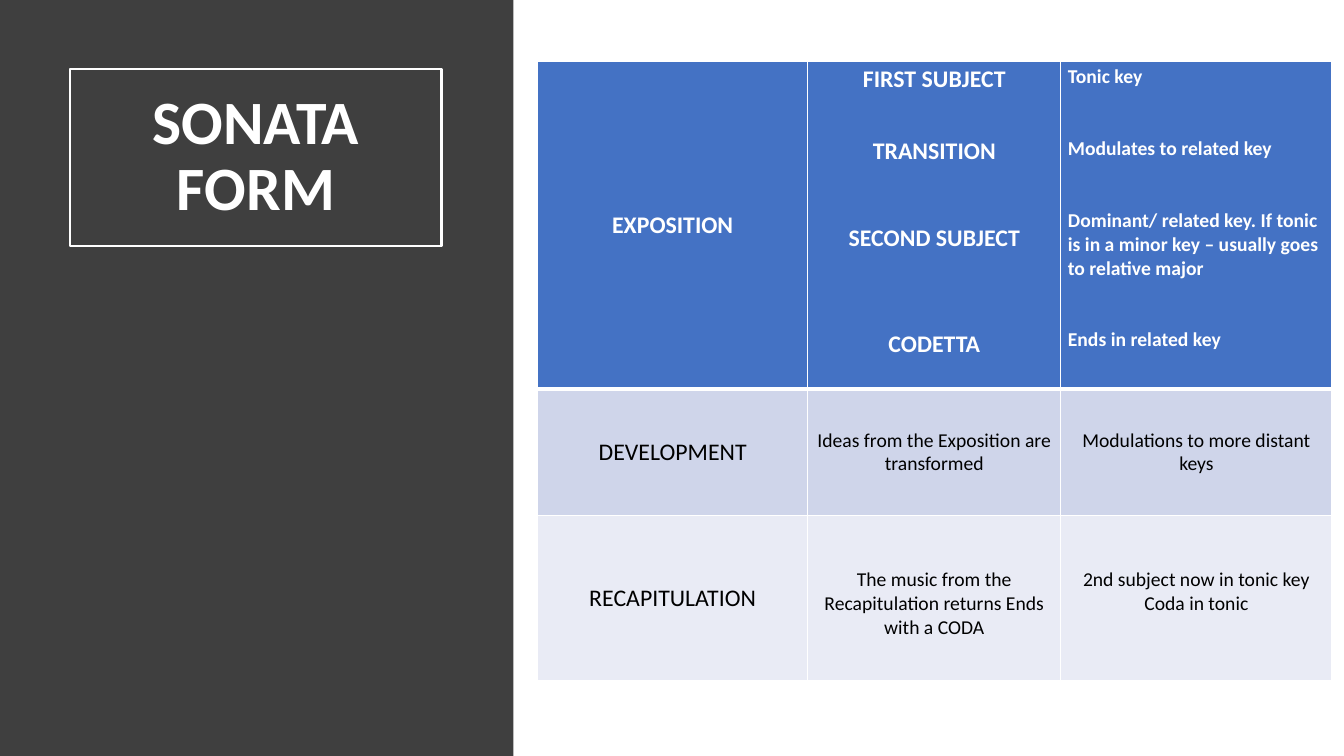
from dataclasses import dataclass

from lxml.etree import SubElement
from pptx import Presentation
from pptx.dml.color import RGBColor
from pptx.enum.shapes import MSO_SHAPE
from pptx.enum.text import MSO_ANCHOR, PP_ALIGN
from pptx.oxml.ns import qn
from pptx.util import Inches, Pt


@dataclass(frozen=True)
class Theme:
    font: str = "Calibri"
    white: str = "FFFFFF"
    black: str = "000000"
    panel: str = "3F3F3F"
    bands: tuple = ("4472C4", "CFD5EA", "E9EBF5")
    title: float = 44
    label: float = 17
    body: float = 14
    thin: float = 1
    frame: float = 1.5
    thick: float = 3


@dataclass(frozen=True)
class Cell:
    """Lines of text, with the gap in points above each line after the first."""
    lines: tuple
    size: float
    gaps: tuple = ()
    align: PP_ALIGN = PP_ALIGN.CENTER
    anchor: MSO_ANCHOR = MSO_ANCHOR.MIDDLE
    top: float = 0.04


THEME = Theme()
WIDE, HIGH = 13.33, 7.5
COLS = (2.68, 2.51, 2.69)
ROWS = (3.25, 1.26, 1.63)
TOP = MSO_ANCHOR.TOP
DROP = 0.52

GRID = (
    (
        Cell(("EXPOSITION",), THEME.label),
        Cell(("FIRST SUBJECT", "TRANSITION", "SECOND SUBJECT", "CODETTA"),
             THEME.label, (30.5, 41.5, 54.3), anchor=TOP),
        Cell(("Tonic key", "Modulates to related key",
              "Dominant/ related key. If tonic is in a minor key – usually goes "
              "to relative major", "Ends in related key"),
             THEME.body, (34.2,) * 3, PP_ALIGN.LEFT, TOP),
    ),
    (
        Cell(("DEVELOPMENT",), THEME.label),
        Cell(("Ideas from the Exposition are transformed",), THEME.body),
        Cell(("Modulations to more distant keys",), THEME.body),
    ),
    (
        Cell(("RECAPITULATION",), THEME.label),
        Cell(("The music from the Recapitulation returns Ends with a CODA",),
             THEME.body, anchor=TOP, top=DROP),
        Cell(("2nd subject now in tonic key", "Coda in tonic"),
             THEME.body, (0,), anchor=TOP, top=DROP),
    ),
)


def color(code):
    return RGBColor.from_string(code)


def write(para, text, size, code, bold, align=PP_ALIGN.CENTER):
    para.alignment = align
    run = para.add_run()
    run.text = text
    font = run.font
    font.name, font.size, font.bold = THEME.font, Pt(size), bold
    font.color.rgb = color(code)


def add_rect(slide, box, fill=None, line=None):
    shape = slide.shapes.add_shape(MSO_SHAPE.RECTANGLE, *map(Inches, box))
    shape.shadow.inherit = False
    if fill:
        shape.fill.solid()
        shape.fill.fore_color.rgb = color(fill)
    else:
        shape.fill.background()
    if line:
        shape.line.color.rgb = color(line)
        shape.line.width = Pt(THEME.frame)
    else:
        shape.line.fill.background()
    return shape


def add_panel(slide, box):
    """Dark side panel with the framed title."""
    left, top, width, height = box
    add_rect(slide, box, fill=THEME.panel)
    place = (left + 0.137 * width, top + 0.091 * height,
             0.723 * width, 0.235 * height)
    frame = add_rect(slide, place, line=THEME.white).text_frame
    frame.word_wrap = True
    frame.vertical_anchor = MSO_ANCHOR.MIDDLE
    para = frame.paragraphs[0]
    para.line_spacing = 0.9
    write(para, "SONATA FORM", THEME.title, THEME.white, True)


def add_edges(cell, row):
    """White cell borders, heavier below the first row."""
    widths = {"L": THEME.thin, "R": THEME.thin,
              "T": THEME.thick if row == 1 else THEME.thin,
              "B": THEME.thick if row == 0 else THEME.thin}
    props = cell._tc.get_or_add_tcPr()
    for side, width in widths.items():
        line = SubElement(props, qn(f"a:ln{side}"), w=str(Pt(width)))
        fill = SubElement(line, qn("a:solidFill"))
        SubElement(fill, qn("a:srgbClr"), val=THEME.white)


def fill_cell(cell, item, row):
    add_edges(cell, row)
    cell.fill.solid()
    cell.fill.fore_color.rgb = color(THEME.bands[row])
    cell.margin_left = cell.margin_right = Inches(0.07)
    cell.margin_top, cell.margin_bottom = Inches(item.top), Inches(0.04)
    cell.vertical_anchor = item.anchor
    head = row == 0
    code = THEME.white if head else THEME.black
    frame = cell.text_frame
    for index, text in enumerate(item.lines):
        para = frame.add_paragraph() if index else frame.paragraphs[0]
        if index:
            para.space_before = Pt(item.gaps[index - 1])
        write(para, text, item.size, code, head, item.align)


def add_grid(slide, box):
    """Table of the sections, with columns and rows shared out over the box."""
    left, top, width, height = box
    table = slide.shapes.add_table(
        len(ROWS), len(COLS), *map(Inches, box)).table
    table.first_row = table.horz_banding = False
    for column, share in zip(table.columns, COLS):
        column.width = Inches(width * share / sum(COLS))
    for row, share in zip(table.rows, ROWS):
        row.height = Inches(height * share / sum(ROWS))
    for y, items in enumerate(GRID):
        for x, item in enumerate(items):
            fill_cell(table.cell(y, x), item, y)


def main():
    deck = Presentation()
    deck.slide_width, deck.slide_height = Inches(WIDE), Inches(HIGH)
    slide = deck.slides.add_slide(deck.slide_layouts[6])
    add_panel(slide, (0, 0, 0.382 * WIDE, HIGH))
    add_grid(slide, (0.4 * WIDE, 0.081 * HIGH, sum(COLS), sum(ROWS)))
    deck.save("out.pptx")


if __name__ == "__main__":
    main()
